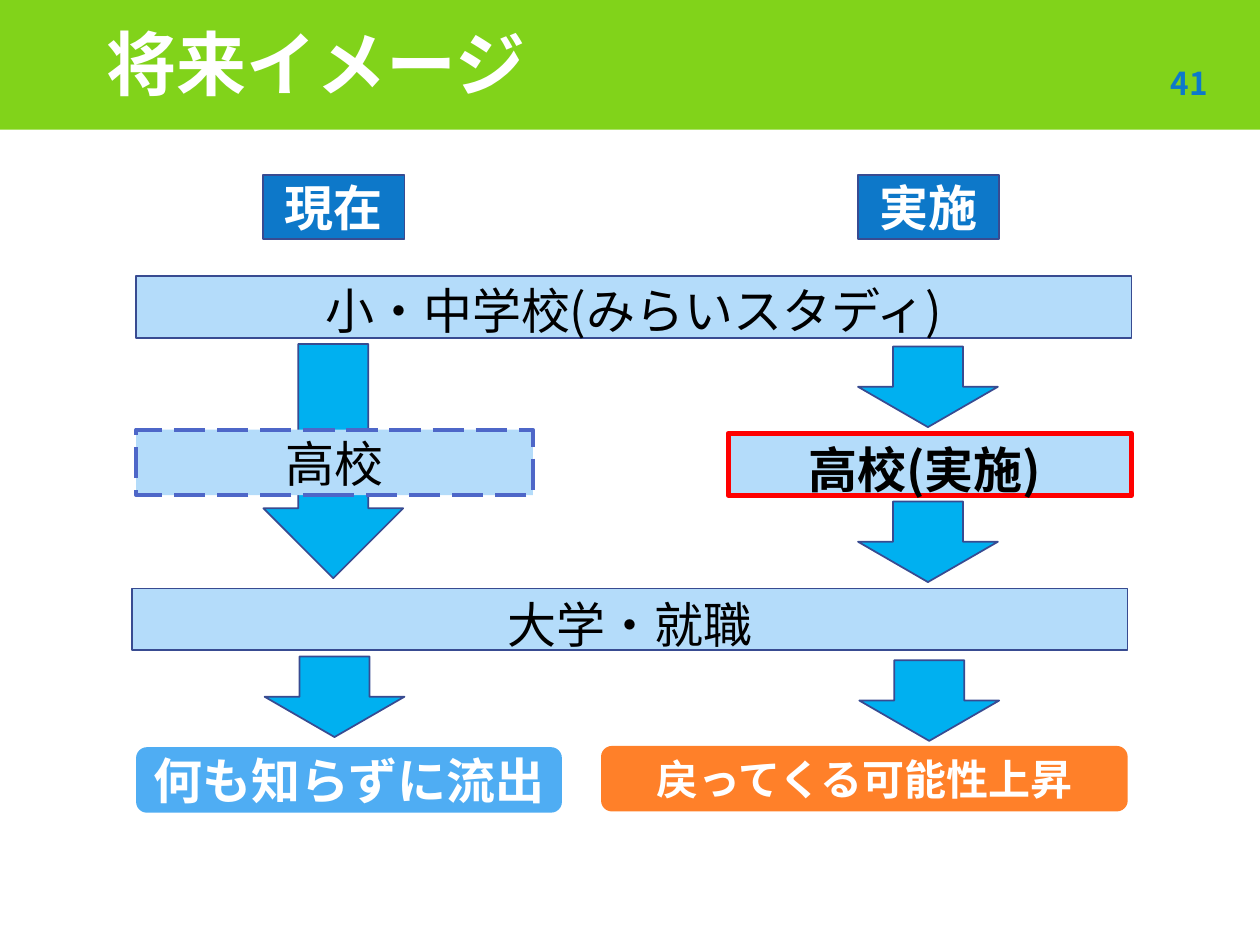
"""Builds the slide comparing today's school path with the future one."""
from lxml import etree
from pptx import Presentation
from pptx.dml.color import RGBColor
from pptx.enum.dml import MSO_LINE
from pptx.enum.shapes import MSO_SHAPE
from pptx.enum.text import MSO_ANCHOR, PP_ALIGN
from pptx.oxml.ns import qn
from pptx.util import Inches, Pt

RECT = MSO_SHAPE.RECTANGLE
ROUND = MSO_SHAPE.ROUNDED_RECTANGLE
ARROW = MSO_SHAPE.DOWN_ARROW
LONG_DASH = MSO_LINE.LONG_DASH
TOP, MIDDLE = MSO_ANCHOR.TOP, MSO_ANCHOR.MIDDLE
LEFT, CENTER = PP_ALIGN.LEFT, PP_ALIGN.CENTER
FONT = "Noto Sans CJK JP"
BLACK, WHITE = "000000", "FFFFFF"
NAVY, PALE, BLUE = "384B91", "B4DCFA", "0D78C9"

deck = Presentation()
deck.slide_width, deck.slide_height = Inches(10), Inches(7.5)
page = deck.slides.add_slide(deck.slide_layouts[6])


def add_box(kind, place, fill, line=None, width=1):
    """Add a preset shape, or a text box when kind is None."""
    area = [Inches(length) for length in place]
    if kind is None:
        return page.shapes.add_textbox(*area)
    box = page.shapes.add_shape(kind, *area)
    box.shadow.inherit = False
    box.fill.solid()
    box.fill.fore_color.rgb = RGBColor.from_string(fill)
    if line:
        box.line.color.rgb = RGBColor.from_string(line)
        box.line.width = Pt(width)
    else:
        box.line.fill.background()
    return box


def write(box, text, size, color, bold=False, align=CENTER, anchor=MIDDLE):
    """Fill a box with one styled paragraph."""
    frame = box.text_frame
    frame.word_wrap = True
    frame.vertical_anchor = anchor
    frame.text = text
    para = frame.paragraphs[0]
    para.alignment = align
    for span in para.runs:
        span.font.size = Pt(size)
        span.font.bold = bold
        span.font.name = FONT
        span.font.color.rgb = RGBColor.from_string(color)
        etree.SubElement(span.font._element, qn("a:ea"), typeface=FONT)
    return para


add_box(RECT, (0, -0.03, 10, 1.06), "81D31A")
title = add_box(None, (0.75, 0.2, 8.5, 0.7), None)
write(title, "将来イメージ", 40, WHITE, True, LEFT).line_spacing = 0.85
number = add_box(None, (9.24, 0.46, 0.47, 0.4), None)
number.text_frame.margin_left = Inches(0.05)
write(number, "41", 18, "0D79CA", True, LEFT)

for left, heading in ((2.09, "現在"), (6.81, "実施")):
    write(add_box(RECT, (left, 1.39, 1.12, 0.51), BLUE, NAVY), heading, 28, WHITE, True)

stages = [
    (1.08, 2.19, 7.9, NAVY, 1, 1.08, 2.18, "小・中学校(みらいスタディ)", False),
    (1.05, 4.67, 7.9, NAVY, 1, 1.05, 4.67, "大学・就職", False),
    (5.78, 3.44, 3.2, "FF0000", 3, 5.74, 3.44, "高校(実施)", True),
]
for left, top, width, line, weight, text_left, text_top, text, bold in stages:
    add_box(RECT, (left, top, width, 0.49), PALE, line, weight)
    label = add_box(None, (text_left, text_top, width, 0.57), None)
    write(label, text, 28, BLACK, bold, anchor=TOP)

arrows = [
    (6.81, 2.75, 0.64),
    (6.81, 3.98, 0.64),
    (2.09, 2.73, 1.86),
    (6.82, 5.24, 0.64),
    (2.1, 5.21, 0.64),
]
for left, top, height in arrows:
    add_box(ARROW, (left, top, 1.11, height), "00B0F0", NAVY)

school = add_box(RECT, (1.08, 3.41, 3.15, 0.52), PALE, "4E67C8", 2.25)
school.line.dash_style = LONG_DASH
write(school, "高校", 28, BLACK)

outcomes = [
    (1.08, 5.93, 3.38, "4FADF3", "何も知らずに流出", 28),
    (4.77, 5.92, 4.18, "FF8029", "戻ってくる可能性上昇", 24),
]
for left, top, width, fill, text, size in outcomes:
    write(add_box(ROUND, (left, top, width, 0.52), fill), text, size, WHITE, True)

deck.save("out.pptx")
